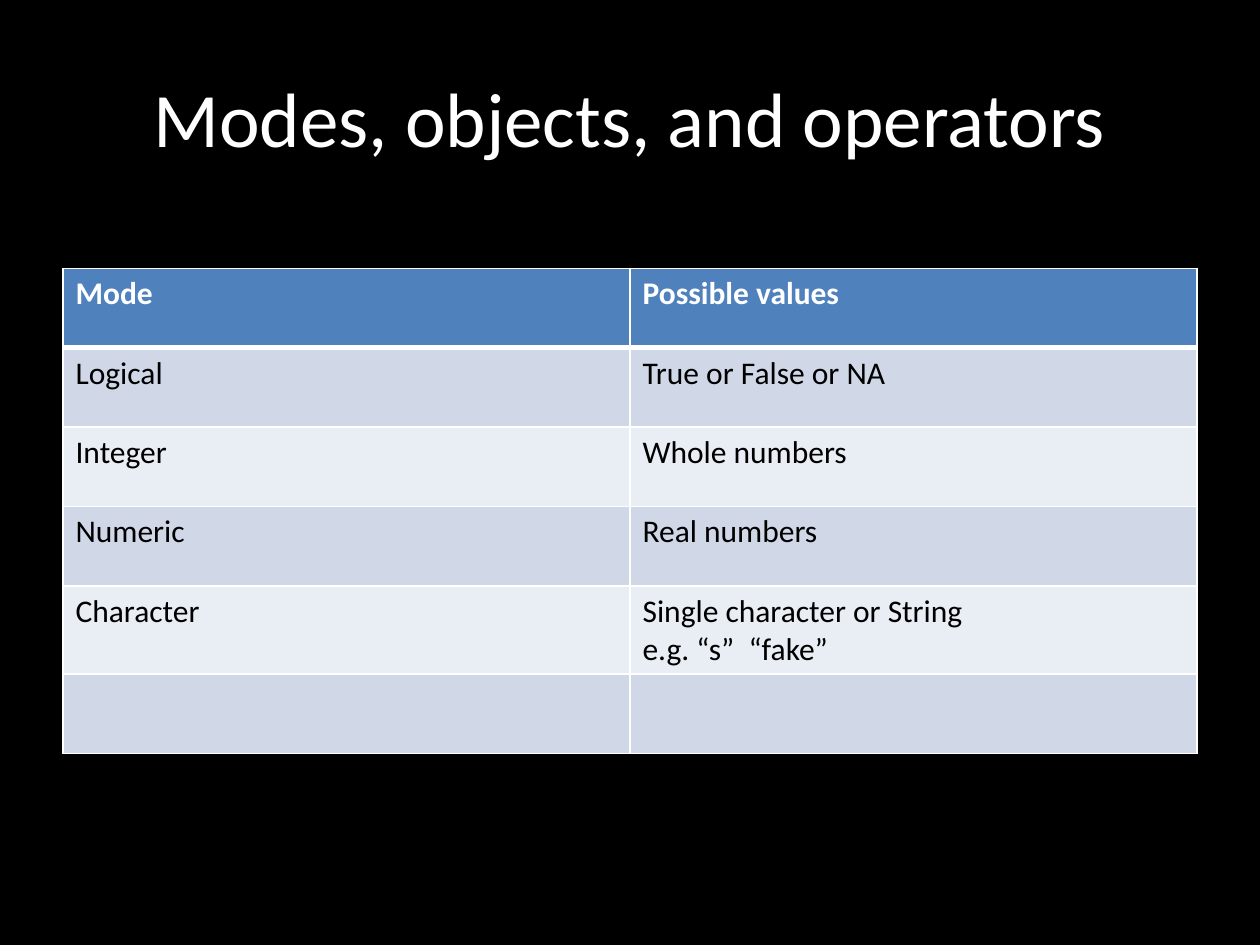
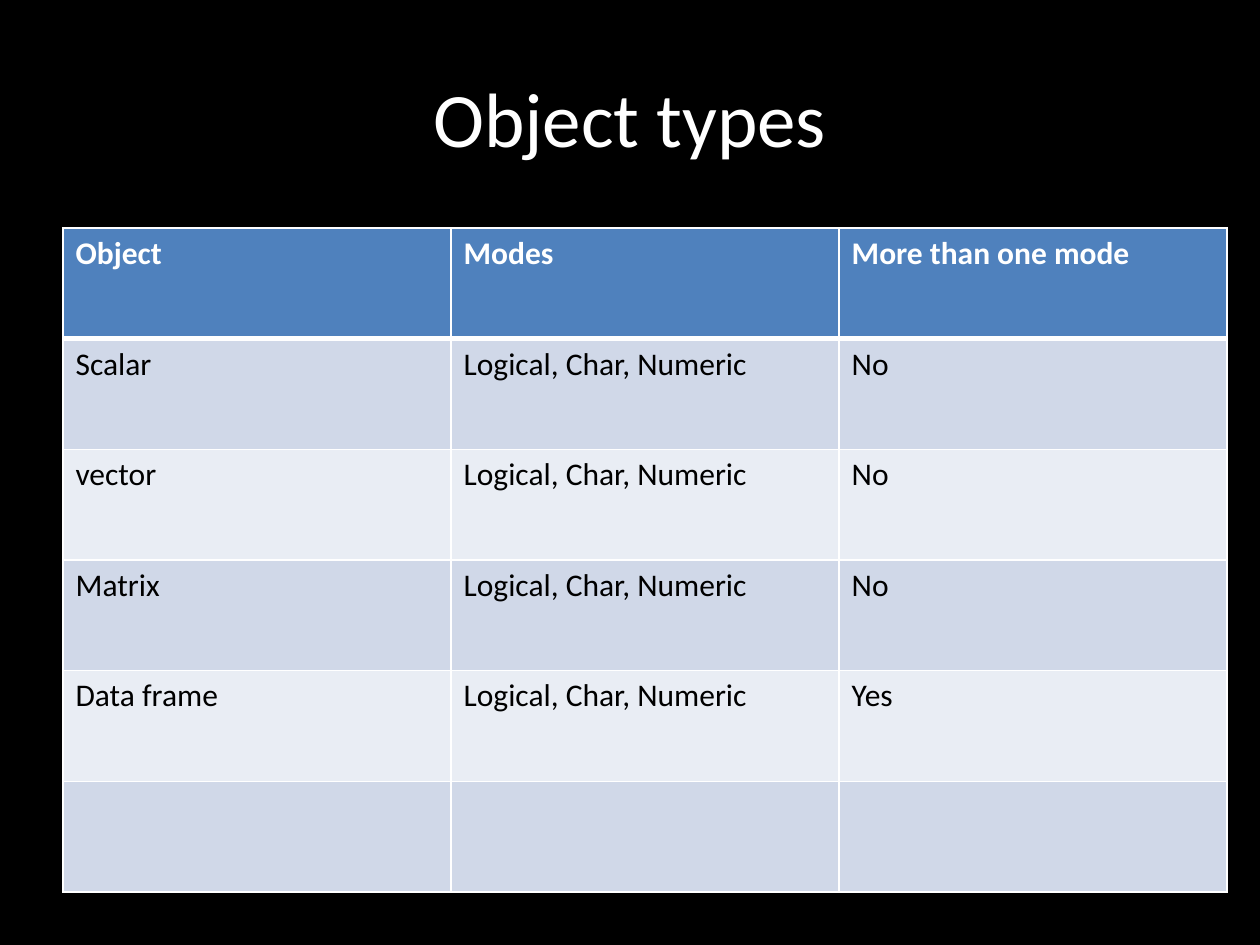
import pptx
import pptx.dml.color
import pptx.enum.text
import pptx.oxml.ns
import pptx.util
from lxml import etree

Cm, Pt = pptx.util.Cm, pptx.util.Pt
FONT = "Calibri"
BLACK, WHITE, HEADER = "000000", "FFFFFF", "4F81BD"
BANDS = ("D0D8E8", "E9EDF4")
LEFT = 1.27
BODY_WIDTH = 22.86

MODES = [
    ("Mode", "Possible values"),
    ("Logical", "True or False or NA"),
    ("Integer", "Whole numbers"),
    ("Numeric", "Real numbers"),
    ("Character", "Single character or String\ne.g. “s”  “fake”"),
    ("", ""),
]
ALL_MODES = "Logical, Char, Numeric"
OBJECTS = [
    ("Object", "Modes", "More than one mode"),
    ("Scalar", ALL_MODES, "No"),
    ("vector", ALL_MODES, "No"),
    ("Matrix", ALL_MODES, "No"),
    ("Data frame", ALL_MODES, "Yes"),
    ("", "", ""),
]


def rgb(color):
    return pptx.dml.color.RGBColor.from_string(color)


def format_text(tf, size, color, bold=False):
    for p in tf.paragraphs:
        for r in p.runs:
            r.font.name = FONT
            r.font.size = Pt(size)
            r.font.bold = bold
            r.font.color.rgb = rgb(color)


def add_slide(prs, title):
    """Add a black slide with a centred title."""
    s = prs.slides.add_slide(prs.slide_layouts[6])
    s.background.fill.solid()
    s.background.fill.fore_color.rgb = rgb(BLACK)
    sp = s.shapes.add_textbox(Cm(LEFT), Cm(0.76), Cm(BODY_WIDTH), Cm(3.18))
    tf = sp.text_frame
    tf.word_wrap = True
    tf.vertical_anchor = pptx.enum.text.MSO_ANCHOR.MIDDLE
    tf.text = title
    tf.paragraphs[0].alignment = pptx.enum.text.PP_ALIGN.CENTER
    format_text(tf, 44, WHITE)
    return s


def set_borders(cell, top=1, bottom=1):
    """Draw white cell borders; top and bottom are widths in points."""
    qn = pptx.oxml.ns.qn
    tc_pr = cell._tc.get_or_add_tcPr()
    for side, width in (("L", 1), ("R", 1), ("T", top), ("B", bottom)):
        ln = etree.SubElement(tc_pr, qn("a:ln" + side), w=str(Pt(width)))
        fill = etree.SubElement(ln, qn("a:solidFill"))
        etree.SubElement(fill, qn("a:srgbClr"), val=WHITE)


def add_banded_table(s, rows, top, width, row_height):
    """Add a table with a header row and alternating row fills."""
    n_rows, n_cols = len(rows), len(rows[0])
    table = s.shapes.add_table(n_rows, n_cols, Cm(LEFT), Cm(top),
                               Cm(width), Cm(row_height * n_rows)).table
    for i, texts in enumerate(rows):
        is_header = i == 0
        fill = HEADER if is_header else BANDS[(i - 1) % 2]
        for j, text in enumerate(texts):
            cell = table.cell(i, j)
            set_borders(cell, top=3 if i == 1 else 1,
                        bottom=3 if is_header else 1)
            cell.fill.solid()
            cell.fill.fore_color.rgb = rgb(fill)
            cell.text_frame.text = text
            format_text(cell.text_frame, 18, WHITE if is_header else BLACK,
                        bold=is_header)


def main():
    prs = pptx.Presentation()
    prs.slide_width, prs.slide_height = Cm(25.4), Cm(19.05)

    s = add_slide(prs, "Modes, objects, and operators")
    add_banded_table(s, MODES, top=5.41, width=BODY_WIDTH, row_height=1.6)

    s = add_slide(prs, "Object types")
    add_banded_table(s, OBJECTS, top=4.6, width=23.47, row_height=2.23)

    prs.save("out.pptx")


if __name__ == "__main__":
    main()
